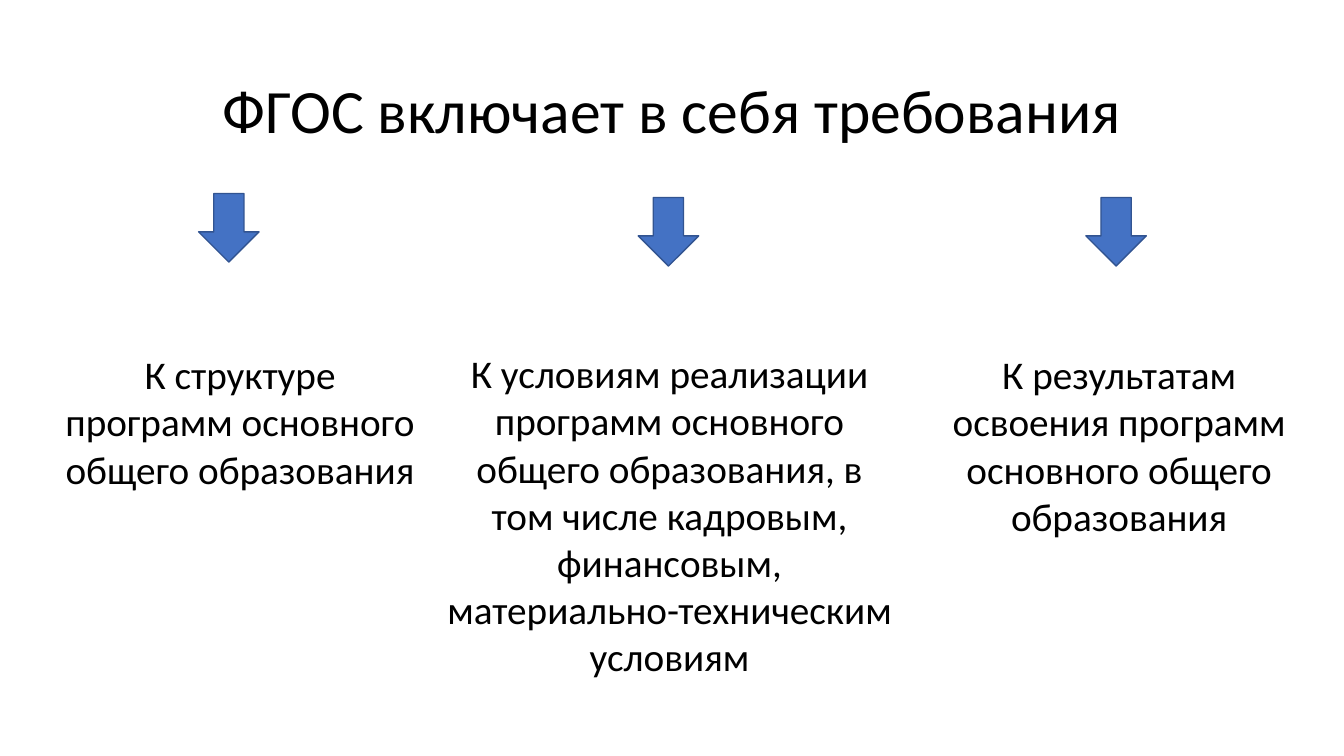
from pptx import Presentation
from pptx.dml.color import RGBColor
from pptx.enum.shapes import MSO_SHAPE
from pptx.enum.text import MSO_ANCHOR, PP_ALIGN
from pptx.util import Pt

EMU_PER_PX = 9144  # 100 px to the inch
DOWN_ARROW = MSO_SHAPE.DOWN_ARROW
TOP, MIDDLE = MSO_ANCHOR.TOP, MSO_ANCHOR.MIDDLE
CENTER = PP_ALIGN.CENTER

FONT = "Calibri"
TEXT_COLOR = "000000"
ARROW_FILL = "4472C4"
ARROW_LINE = "325491"
ARROW_SIZE = (60, 68)

TITLE = "ФГОС включает в себя требования"
# Text, text box, top left corner of the arrow above it
REQUIREMENTS = [
    ("К структуре программ основного общего образования",
     (49, 343, 378, 151), (197, 192)),
    ("К условиям реализации программ основного общего образования, "
     "в том числе кадровым, финансовым, материально-техническим условиям",
     (428, 342, 472, 340), (633, 196)),
    ("К результатам освоения программ основного общего образования",
     (930, 343, 360, 199), (1077, 196)),
]


def px(*lengths):
    return [n * EMU_PER_PX for n in lengths]


def color(hex_string):
    return RGBColor.from_string(hex_string)


def add_text(slide, text, box, size, anchor=TOP, line_spacing=1.0):
    tf = slide.shapes.add_textbox(*px(*box)).text_frame
    tf.word_wrap = True
    tf.vertical_anchor = anchor
    p = tf.paragraphs[0]
    p.alignment = CENTER
    p.line_spacing = line_spacing
    r = p.add_run()
    r.text = text
    r.font.name = FONT
    r.font.size = Pt(size)
    r.font.color.rgb = color(TEXT_COLOR)


def add_down_arrow(slide, corner):
    sp = slide.shapes.add_shape(DOWN_ARROW, *px(*corner, *ARROW_SIZE))
    sp.shadow.inherit = False
    sp.fill.solid()
    sp.fill.fore_color.rgb = color(ARROW_FILL)
    sp.line.color.rgb = color(ARROW_LINE)
    sp.line.width = Pt(1)


def main():
    prs = Presentation()
    prs.slide_width, prs.slide_height = px(1333, 750)
    slide = prs.slides.add_slide(prs.slide_layouts[6])

    add_text(slide, TITLE, (92, 40, 1150, 145), 44, MIDDLE, 0.9)
    for text, box, arrow_corner in REQUIREMENTS:
        add_text(slide, text, box, 28)
        add_down_arrow(slide, arrow_corner)

    prs.save("out.pptx")


if __name__ == "__main__":
    main()
